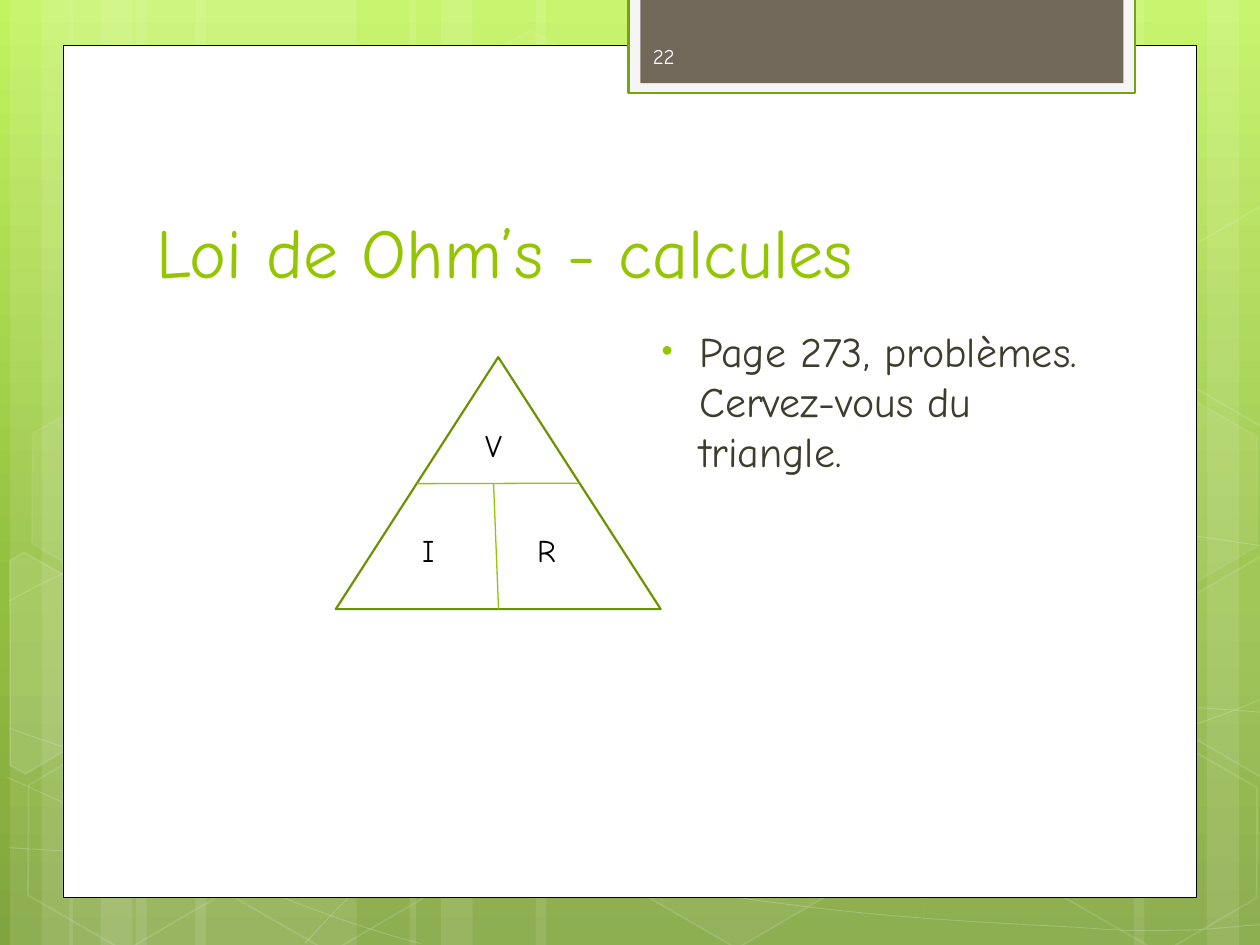
from copy import deepcopy
from math import cos, radians, sin

from lxml import etree
from pptx import Presentation
from pptx.dml.color import RGBColor
from pptx.enum.shapes import MSO_CONNECTOR, MSO_SHAPE
from pptx.enum.text import MSO_ANCHOR
from pptx.oxml.ns import qn
from pptx.util import Cm, Pt

RECT, HEXAGON, TRIANGLE = MSO_SHAPE.RECTANGLE, MSO_SHAPE.HEXAGON, MSO_SHAPE.ISOSCELES_TRIANGLE
STRAIGHT = MSO_CONNECTOR.STRAIGHT
TOP, MIDDLE, BOTTOM = MSO_ANCHOR.TOP, MSO_ANCHOR.MIDDLE, MSO_ANCHOR.BOTTOM
FONT, LIME = "Comic Neue", "94C600"
TILT = 30


def rgb(value):
    return RGBColor.from_string(value)


def add_text(s, text, left, top, width, height, size=18, color="000000",
             anchor=TOP, wrap=True, bullet=None):
    box = s.shapes.add_textbox(Cm(left), Cm(top), Cm(width), Cm(height))
    tf = box.text_frame
    tf.word_wrap = wrap
    tf.vertical_anchor = anchor
    p = tf.paragraphs[0]
    if bullet:
        pPr = p._p.get_or_add_pPr()
        pPr.set("marL", str(Cm(0.95)))
        pPr.set("indent", str(Cm(-0.76)))
        buClr = etree.SubElement(pPr, qn("a:buClr"))
        etree.SubElement(buClr, qn("a:srgbClr"), val=LIME)
        etree.SubElement(pPr, qn("a:buSzPct"), val="76000")
        etree.SubElement(pPr, qn("a:buFont"), typeface="Arial")
        etree.SubElement(pPr, qn("a:buChar"), char=bullet)
    r = p.add_run()
    r.text = text
    r.font.name = FONT
    r.font.size = Pt(size)
    r.font.color.rgb = rgb(color)


prs = Presentation()
prs.slide_width, prs.slide_height = Cm(25.4), Cm(19.05)
s = prs.slides.add_slide(prs.slide_layouts[6])

# Green gradient background
fill = s.background.fill
fill.gradient()
fill.gradient_angle = 270
gs_list = next(s.element.iter(qn("a:gsLst")))
gs_list.append(deepcopy(gs_list[0]))
for stop, (position, color) in zip(
        fill.gradient_stops, [(0, "C3F35F"), (0.62, "93BF3F"), (1, "81A53E")]):
    stop.position = position
    stop.color.rgb = rgb(color)

# Translucent white decoration: (shape, fill opacity, line opacity, line width)
ghosts = []

# Vertical stripes
stripes = [(2.74, 4.45), (0.2, 1.27), (0.84, 2.12), (3.94, 4.45), (1.4, 1.27),
           (2.03, 2.12), (18.62, 4.45), (24.33, 1.27), (22.86, 2.12),
           (10.8, 7.83), (8.26, 1.27), (8.89, 2.12)]
for left, width in stripes:
    stripe = s.shapes.add_shape(RECT, Cm(left), 0, Cm(width), prs.slide_height)
    ghosts.append((stripe, 10, 0, 0))

# Thin curves: a start point, then three points for each cubic segment
curves = [
    [(0.18, 17.09), (1.55, 17.17), (2.92, 17.25), (4.83, 17.22), (6.73, 17.2),
     (9.09, 17.15), (11.63, 16.89), (14.17, 16.64), (17.78, 16.15), (20.12, 15.67),
     (22.43, 15.19), (24.82, 14.43), (25.58, 14)],
    [(0.18, 12.12), (0.91, 11.71), (1.65, 11.33), (3.07, 10.95), (4.52, 10.57),
     (6.58, 10.01), (8.81, 9.83), (11.07, 9.65), (13.82, 9.63), (16.61, 9.83),
     (19.41, 10.03), (24.05, 10.82), (25.58, 11.02)],
    [(0.15, 15.67), (3.23, 17.07), (6.27, 18.47), (8.48, 19.02)],
    [(0.18, 14.68), (0.97, 14.96), (1.78, 15.24), (3.25, 15.65), (4.72, 16.03),
     (6.93, 16.66), (9.07, 17.09), (11.18, 17.53), (13.84, 17.98), (15.95, 18.24),
     (18.06, 18.52), (20.32, 18.62), (21.67, 18.69), (22.99, 18.8), (23.34, 18.75),
     (24, 18.75), (24.66, 18.72), (25.12, 18.64), (25.58, 18.64)],
    [(6.15, 19.02), (6.6, 18.52), (7.06, 18.01), (7.67, 17.55), (8.28, 17.09),
     (9.14, 16.59), (9.86, 16.23), (10.57, 15.88), (11, 15.72), (11.94, 15.47),
     (12.88, 15.21), (14.55, 14.86), (15.44, 14.68), (16.36, 14.5), (16.48, 14.5),
     (17.27, 14.45), (18.06, 14.38), (19.3, 14.3), (20.17, 14.27), (21.06, 14.25),
     (22.5, 14.27), (22.5, 14.27), (22.5, 14.27), (24.21, 14.27), (24.21, 14.27),
     (24.66, 14.3), (25.1, 14.33), (25.32, 14.35), (25.55, 14.38), (25.48, 14.35),
     (25.55, 14.38)],
]
for nodes in curves:
    points = [(Cm(x), Cm(y)) for x, y in nodes]
    builder = s.shapes.build_freeform(*points[0])
    builder.add_line_segments(points[1:], close=False)
    curve = builder.convert_to_shape()
    segments = list(curve._element.iter(qn("a:lnTo")))
    for i in range(0, len(segments), 3):
        cubic = etree.Element(qn("a:cubicBezTo"))
        segments[i].addprevious(cubic)
        for segment in segments[i:i + 3]:
            cubic.append(segment[0])
            segment.getparent().remove(segment)
    ghosts.append((curve, 0, 20, 0.5))

# Hexagons: left, top, fill opacity, line opacity
for left, top, fill_alpha, line_alpha in [
        (8.48, 0.91, 4, 8), (12.62, 14.96, 6, 12), (0.28, 15.01, 0, 12),
        (0.36, 7.92, 7, 8), (4.42, 15.04, 0, 12), (19.13, 11.51, 10, 12),
        (21.18, 15.06, 0, 12), (21.18, 7.98, 7, 8)]:
    hexagon = s.shapes.add_shape(HEXAGON, Cm(left), Cm(top), Cm(4.45), Cm(3.86))
    hexagon.adjustments[0] = 0.285
    hexagon.rotation = TILT
    ghosts.append((hexagon, fill_alpha, line_alpha, 1))

# Hexagons cut by the slide edges: fill opacity, centre, corners as they stand after tilting
c, d = cos(radians(TILT)), sin(radians(TILT))
for fill_alpha, (cx, cy), corners in [
        (10, (0.91, 13.59), [(0.2, 11.3), (0.48, 11.13), (2.44, 12.24),
                             (2.41, 14.48), (0.51, 15.6), (0.2, 15.42)]),
        (4, (25.02, 13.21), [(23.52, 12.32), (25.43, 11.2), (25.63, 11.33),
                             (25.63, 15.57), (25.45, 15.67), (23.52, 14.55)]),
        (0, (25.02, 6.12), [(23.52, 5.26), (25.43, 4.14), (25.65, 4.27),
                            (25.63, 8.51), (25.45, 8.61), (23.52, 7.49)])]:
    points = [(Cm(cx + (x - cx) * c + (y - cy) * d), Cm(cy - (x - cx) * d + (y - cy) * c))
              for x, y in corners]
    builder = s.shapes.build_freeform(*points[0])
    builder.add_line_segments(points[1:], close=True)
    cut_hexagon = builder.convert_to_shape()
    cut_hexagon.rotation = TILT
    ghosts.append((cut_hexagon, fill_alpha, 12, 1))

for sp, fill_alpha, line_alpha, line_width in ghosts:
    sp.shadow.inherit = False
    sp.line.width = Pt(line_width)
    for paint, alpha in ((sp.fill, fill_alpha), (sp.line.fill, line_alpha)):
        if alpha:
            paint.solid()
            paint.fore_color.rgb = rgb("FFFFFF")
        else:
            paint.background()
    alphas = [alpha for alpha in (fill_alpha, line_alpha) if alpha]
    for color, alpha in zip(sp._element.spPr.iter(qn("a:srgbClr")), alphas):
        etree.SubElement(color, qn("a:alpha"), val=str(alpha * 1000))

# White panel, page tab and Ohm triangle
for kind, left, top, width, height, color, line, weight in [
        (RECT, 1.27, 0.91, 22.86, 17.19, "FFFFFF", "000000", 0.5),
        (RECT, 12.67, -0.05, 10.21, 1.93, "F5F5F5", "74A510", 1.25),
        (RECT, 12.91, -0.05, 9.74, 1.73, "71685A", None, 0),
        (TRIANGLE, 6.77, 7.2, 6.55, 5.08, None, "6D9200", 1.25)]:
    sp = s.shapes.add_shape(kind, Cm(left), Cm(top), Cm(width), Cm(height))
    sp.shadow.inherit = False
    sp.line.width = Pt(weight)
    for paint, value in ((sp.fill, color), (sp.line.fill, line)):
        if value:
            paint.solid()
            paint.fore_color.rgb = rgb(value)
        else:
            paint.background()

# Lines dividing the triangle
for x1, y1, x2, y2 in [(8.41, 9.75, 11.68, 9.74), (9.95, 9.74, 10.05, 12.28)]:
    divider = s.shapes.add_connector(STRAIGHT, Cm(x1), Cm(y1), Cm(x2), Cm(y2))
    divider.line.color.rgb = rgb(LIME)
    divider.line.width = Pt(0.75)
    etree.SubElement(divider._element.spPr, qn("a:effectLst"))

# Texts
add_text(s, "Loi de Ohm’s - calcules", 2.9, 2.84, 19.5, 3.18, size=40, color=LIME, anchor=BOTTOM)
add_text(s, "Page 273, problèmes. Cervez-vous du triangle.", 12.9, 6.43, 9.5, 9.7,
         size=24, color="3E3D2D", bullet="•")
add_text(s, "V", 9.53, 8.46, 1.37, 1.02)
add_text(s, "I", 8.26, 10.59, 1.57, 1.02)
add_text(s, "R", 10.58, 10.59, 0.91, 1.02, wrap=False)
add_text(s, "22", 12.91, 0.62, 3.71, 1.02, size=12, color="FEFEFE", anchor=MIDDLE)

prs.save("out.pptx")
